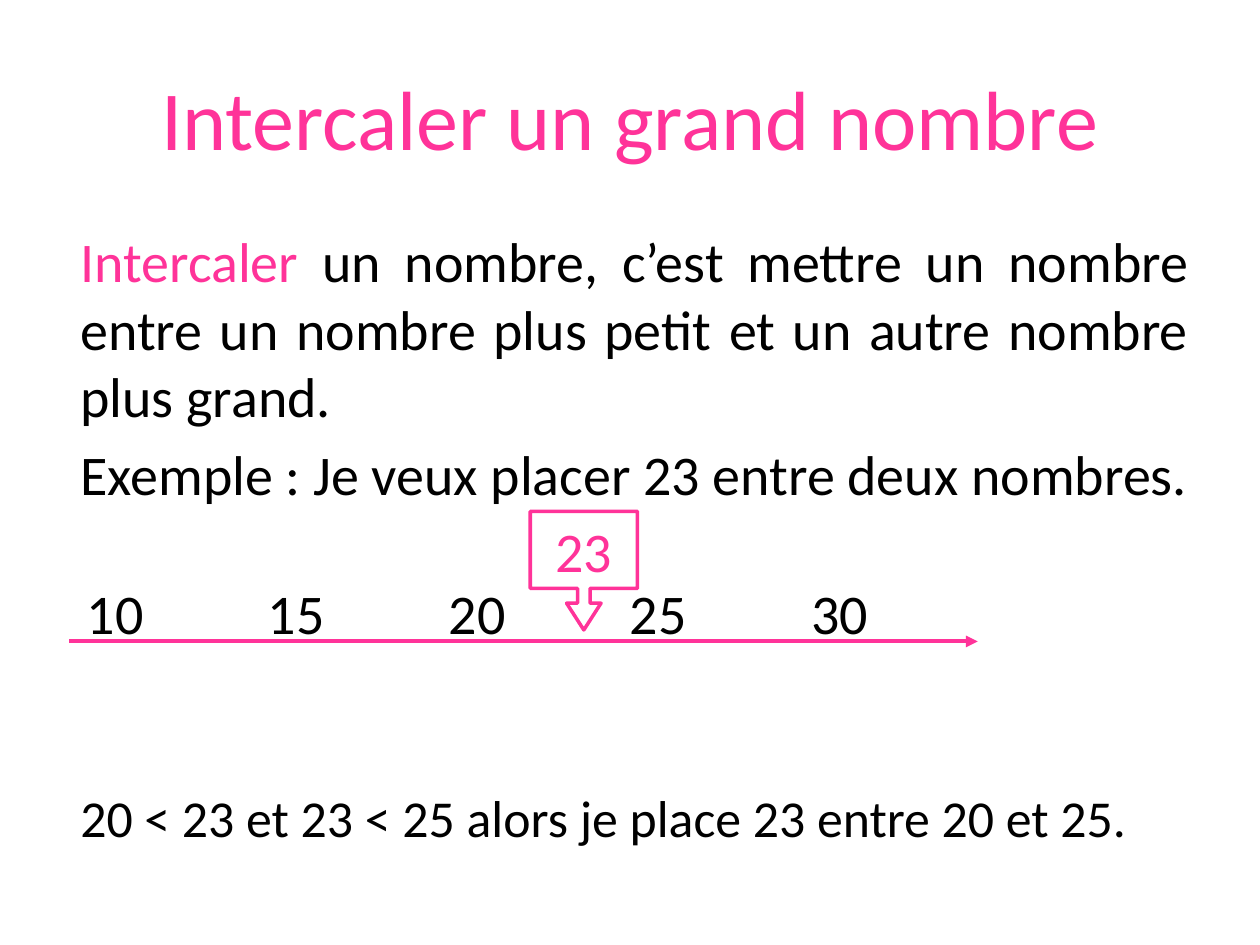
from lxml import etree
from pptx import Presentation
from pptx.dml.color import RGBColor
from pptx.enum.shapes import MSO_CONNECTOR as Connector, MSO_SHAPE as Shape
from pptx.enum.text import MSO_ANCHOR as Anchor, PP_ALIGN as Align
from pptx.oxml.ns import qn
from pptx.util import Cm, Pt

PINK = RGBColor(0xFF, 0x33, 0x99)
BLACK = RGBColor(0x00, 0x00, 0x00)
FONT = "Calibri"


def style(font, size, color):
    font.name = FONT
    font.size = Pt(size)
    font.color.rgb = color


def add_text(slide, box, lines, size, color=BLACK, align=Align.LEFT,
             anchor=Anchor.TOP, space_before=0):
    frame = slide.shapes.add_textbox(*map(Cm, box)).text_frame
    frame.word_wrap = True
    frame.vertical_anchor = anchor
    for index, line in enumerate(lines):
        paragraph = frame.add_paragraph() if index else frame.paragraphs[0]
        paragraph.alignment = align
        paragraph.space_before = Pt(space_before)
        style(paragraph.font, size, color)
        for words, words_color in line:
            run = paragraph.add_run()
            run.text = words
            style(run.font, size, words_color)


def add_title(slide, box):
    add_text(slide, box, [[("Intercaler un grand nombre", PINK)]], 48, PINK,
             Align.CENTER, Anchor.MIDDLE)


def add_definition(slide, box):
    definition = [
        ("Intercaler", PINK),
        (" un nombre, c’est mettre un nombre entre un nombre plus petit "
         "et un autre nombre plus grand.", BLACK),
    ]
    example = [("Exemple : Je veux placer 23 entre deux nombres.", BLACK)]
    add_text(slide, box, [definition, example], 32, align=Align.JUSTIFY,
             space_before=6.4)


def add_number_line(slide, box):
    left, top, width, height = box
    step = 3.65
    for index, number in enumerate(range(10, 31, 5)):
        number_box = (left + 0.1 + index * step, top, 1.7, height)
        add_text(slide, number_box, [[(str(number), BLACK)]], 32)

    axis_y = Cm(top + 1.4)
    axis = slide.shapes.add_connector(
        Connector.STRAIGHT, Cm(left), axis_y, Cm(left + width), axis_y)
    axis.line.color.rgb = PINK
    axis.line.width = Pt(2.25)
    etree.SubElement(axis.line._get_or_add_ln(), qn("a:tailEnd"), type="triangle")
    etree.SubElement(axis._element.spPr, qn("a:effectLst"))


def add_callout(slide, box):
    callout = slide.shapes.add_shape(Shape.DOWN_ARROW_CALLOUT, *map(Cm, box))
    for index, value in enumerate((0.116, 0.161, 0.25, 0.65)):
        callout.adjustments[index] = value
    callout.shadow.inherit = False
    callout.fill.background()
    callout.line.color.rgb = PINK
    callout.line.width = Pt(2)
    callout.text_frame.vertical_anchor = Anchor.MIDDLE
    label = callout.text_frame.paragraphs[0]
    label.text = "23"
    label.alignment = Align.CENTER
    style(label.font, 32, PINK)


def add_conclusion(slide, box):
    sentence = "20 < 23 et 23 < 25 alors je place 23 entre 20 et 25."
    add_text(slide, box, [[(sentence, BLACK)]], 29.6, space_before=5.9)


def main():
    deck = Presentation()
    deck.slide_width = Cm(25.4)
    deck.slide_height = Cm(19.05)
    slide = deck.slides.add_slide(deck.slide_layouts[6])
    add_title(slide, (1.27, 0.76, 22.86, 3.18))
    add_definition(slide, (1.37, 4.45, 22.86, 6.48))
    add_number_line(slide, (1.4, 11.53, 18.31, 1.63))
    add_conclusion(slide, (1.37, 15.72, 22.86, 2.26))
    add_callout(slide, (10.69, 10.31, 2.16, 2.39))
    deck.save("out.pptx")


if __name__ == "__main__":
    main()
